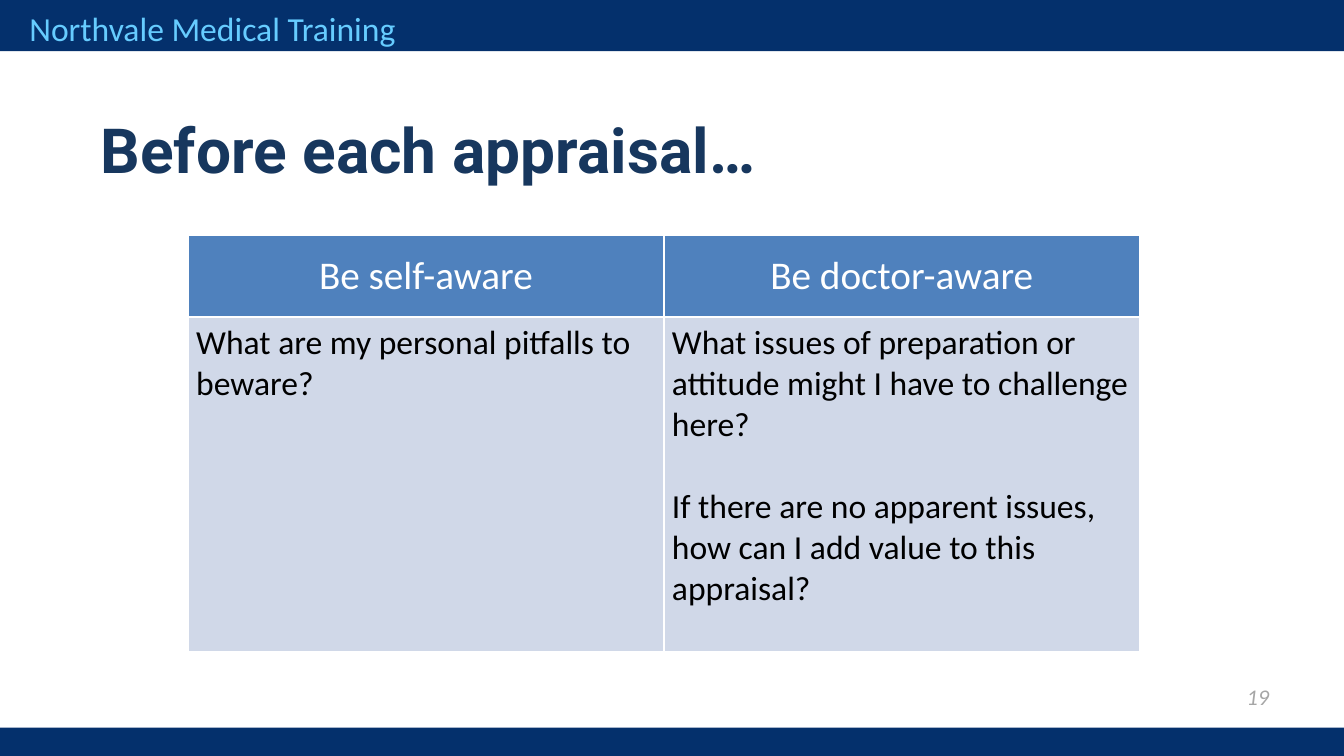
import pptx
import pptx.dml.color
import pptx.enum.shapes
import pptx.enum.text
import pptx.oxml
import pptx.oxml.ns
import pptx.util

Inches = pptx.util.Inches
Pt = pptx.util.Pt
RGBColor = pptx.dml.color.RGBColor
ALIGN = pptx.enum.text.PP_ALIGN
ANCHOR = pptx.enum.text.MSO_ANCHOR

NAVY = RGBColor(0x04, 0x30, 0x6C)
SKY = RGBColor(0x66, 0xCC, 0xFF)
GREY = RGBColor(0xA6, 0xA6, 0xA6)
TITLE_BLUE = RGBColor(0x17, 0x37, 0x5E)
HEADER_BLUE = RGBColor(0x4F, 0x81, 0xBD)
PALE_BLUE = RGBColor(0xD0, 0xD8, 0xE8)
WHITE = RGBColor(0xFF, 0xFF, 0xFF)
BLACK = RGBColor(0x00, 0x00, 0x00)

# Widescreen, 16:9
SLIDE_W = 10
SLIDE_H = SLIDE_W * 9 / 16

COLUMNS = [
    ("Be self-aware", ["What are my personal pitfalls to beware?"]),
    ("Be doctor-aware", [
        "What issues of preparation or attitude might I have to challenge here?",
        "If there are no apparent issues, how can I add value to this appraisal?",
    ]),
]


def format_text(tf, size, color, font="Calibri", align=ALIGN.LEFT, bold=False, italic=False):
    for p in tf.paragraphs:
        p.alignment = align
        for r in p.runs:
            r.font.name = font
            r.font.size = Pt(size)
            r.font.color.rgb = color
            r.font.bold = bold
            r.font.italic = italic


def add_bar(s, x, y, w, h):
    sp = s.shapes.add_shape(pptx.enum.shapes.MSO_SHAPE.RECTANGLE,
                            Inches(x), Inches(y), Inches(w), Inches(h))
    sp.shadow.inherit = False
    sp.fill.solid()
    sp.fill.fore_color.rgb = NAVY
    sp.line.fill.background()


def add_text(s, x, y, w, h, text, size, color, **style):
    tf = s.shapes.add_textbox(Inches(x), Inches(y), Inches(w), Inches(h)).text_frame
    tf.word_wrap = True
    tf.text = text
    format_text(tf, size, color, **style)
    return tf


def add_header(s, x, y, w, h):
    add_bar(s, x, y, w, h)
    add_text(s, x + 0.12, y + 0.01, 4.25, 0.4, "Northvale Medical Training", 18, SKY)


def add_footer(s, x, y, w, h):
    add_bar(s, x, y, w, h)
    add_text(s, x + w - 0.88, y - 0.38, 0.48, 0.3, "19", 12, GREY,
             align=ALIGN.CENTER, italic=True)


def add_title(s, x, y, w, h):
    tf = add_text(s, x, y, w, h, "Before each appraisal…", 33.3, TITLE_BLUE,
                  font="Roboto", bold=True)
    tf.margin_top = Inches(0.06)


def style_cell(cell, fill, anchor):
    cell.margin_left = cell.margin_right = Inches(0.06)
    cell.margin_top = cell.margin_bottom = Inches(0.04)
    cell.vertical_anchor = anchor
    # White cell borders, which must precede the fill
    tc_pr = cell._tc.get_or_add_tcPr()
    for side in "LRTB":
        tc_pr.append(pptx.oxml.parse_xml(
            f'<a:ln{side} {pptx.oxml.ns.nsdecls("a")} w="{Pt(1)}"><a:solidFill>'
            f'<a:srgbClr val="{WHITE}"/></a:solidFill></a:ln{side}>'))
    cell.fill.solid()
    cell.fill.fore_color.rgb = fill


def add_awareness_table(s, x, y, w, h):
    header_h = 0.61
    table = s.shapes.add_table(2, len(COLUMNS), Inches(x), Inches(y),
                               Inches(w), Inches(h)).table
    table.rows[0].height = Inches(header_h)
    table.rows[1].height = Inches(h - header_h)
    for i, (heading, questions) in enumerate(COLUMNS):
        table.columns[i].width = Inches(w / len(COLUMNS))
        # Heading
        cell = table.cell(0, i)
        cell.text_frame.text = heading
        format_text(cell.text_frame, 21, WHITE, align=ALIGN.CENTER)
        style_cell(cell, HEADER_BLUE, ANCHOR.MIDDLE)
        # Questions, one line apart
        cell = table.cell(1, i)
        cell.text_frame.text = "\n".join(questions)
        format_text(cell.text_frame, 18, BLACK)
        for p in cell.text_frame.paragraphs[1:]:
            p.space_before = Pt(22)
        style_cell(cell, PALE_BLUE, ANCHOR.TOP)


def main():
    prs = pptx.Presentation()
    prs.slide_width, prs.slide_height = Inches(SLIDE_W), Inches(SLIDE_H)
    s = prs.slides.add_slide(prs.slide_layouts[6])
    add_header(s, 0, 0, SLIDE_W, 0.38)
    add_footer(s, 0, SLIDE_H - 0.21, SLIDE_W, 0.21)
    add_title(s, 0.65, 0.77, 8.95, 0.57)
    add_awareness_table(s, 1.4, 1.75, 7.08, 3.1)
    prs.save("out.pptx")


if __name__ == "__main__":
    main()
